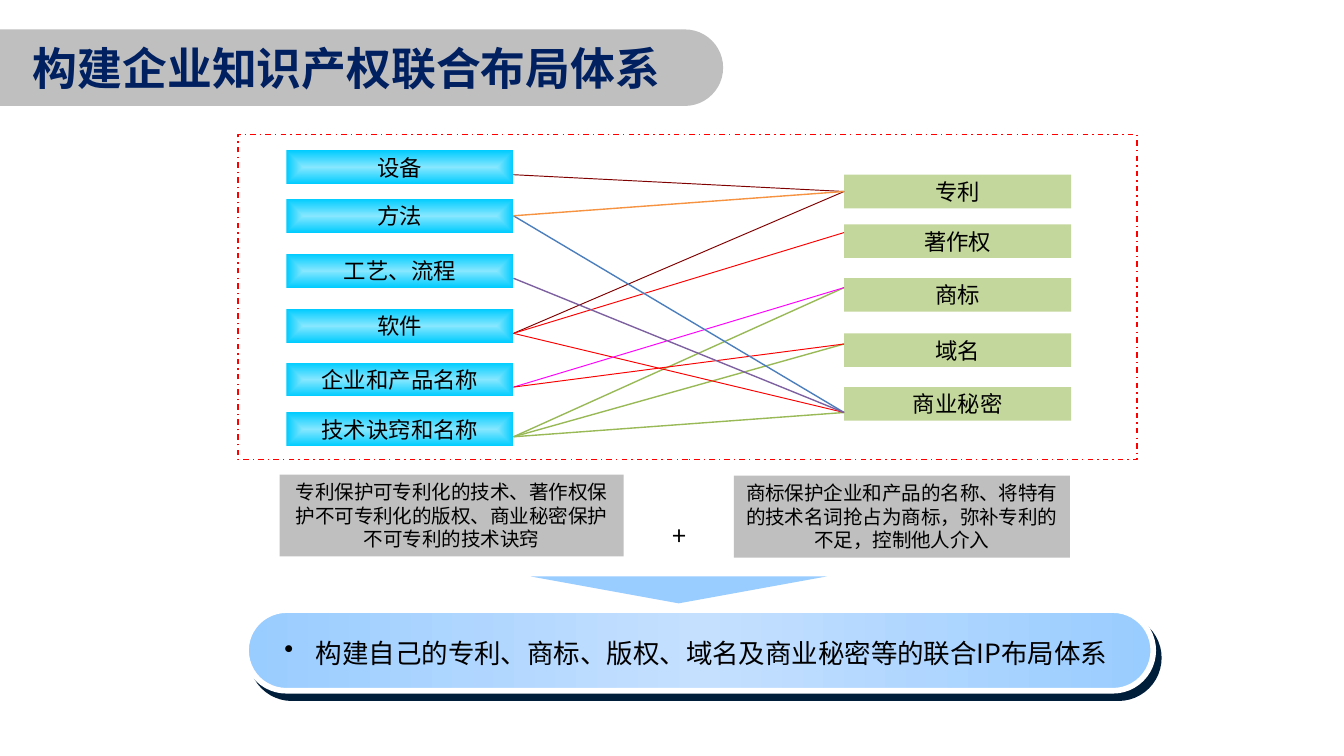
from pptx import Presentation
from pptx import oxml
from pptx.dml.color import RGBColor
from pptx.enum import dml, shapes, text
from pptx.oxml import ns
from pptx.util import Pt


class Theme:
    font = "Noto Sans CJK SC"
    black, navy, white = "000000", "002060", "FFFFFF"
    gray, green, sky, pale = "BFBFBF", "C3D69B", "99CCFF", "C5E0FF"
    cyan, ice, shade = "00CCFF", "86E7FF", "001D3A"
    red, maroon, pink = "FF0000", "800000", "FF00FF"
    lime, blue, plum, amber = "98B955", "4B7EBC", "7D60A0", "F69240"
    title, goal, plus, item, note = 24, 14.2, 13.5, 12, 10.5


KIND = shapes.MSO_SHAPE
MID, TOP = text.MSO_ANCHOR.MIDDLE, text.MSO_ANCHOR.TOP
LEFT, MIDDLE = text.PP_ALIGN.LEFT, text.PP_ALIGN.CENTER


def rgb(code):
    return RGBColor.from_string(code)


def block(slide, kind, box, fill=None, line=None, width=0.75):
    shape = slide.shapes.add_shape(kind, *map(Pt, box))
    shape.shadow.inherit = False
    if fill:
        shape.fill.solid()
        shape.fill.fore_color.rgb = rgb(fill)
    else:
        shape.fill.background()
    if line:
        shape.line.color.rgb = rgb(line)
        shape.line.width = Pt(width)
    else:
        shape.line.fill.background()
    return shape


def blend(shape, stops, mode):
    """Swap the fill for a gradient; mode is its a:lin or a:path element."""
    marks = "".join(f'<a:gs pos="{spot * 1000}"><a:srgbClr val="{code}"/></a:gs>'
                    for spot, code in stops)
    props = shape._element.spPr
    grad = oxml.parse_xml(f'<a:gradFill {ns.nsdecls("a")} rotWithShape="1">'
                          f'<a:gsLst>{marks}</a:gsLst>{mode}</a:gradFill>')
    props.replace(props.find(ns.qn("a:noFill")), grad)


def write(shape, words, size, color=Theme.black, bold=False, align=MIDDLE,
          anchor=TOP, inset=5, wrap=True, space=None, hang=None):
    frame = shape.text_frame
    frame.word_wrap = wrap
    frame.vertical_anchor = anchor
    frame.margin_left, frame.margin_right = Pt(inset), Pt(5)
    frame.margin_top = frame.margin_bottom = Pt(3)
    para = frame.paragraphs[0]
    para.alignment = align
    if space:
        para.line_spacing = space
    if hang:
        props = para._p.get_or_add_pPr()
        props.set("marL", str(Pt(hang)))
        props.set("indent", str(-Pt(hang)))
        props.append(oxml.parse_xml(f'<a:buChar {ns.nsdecls("a")} char="•"/>'))
    run = para.add_run()
    run.text = words
    font = run.font
    font.size, font.bold, font.name = Pt(size), bold, Theme.font
    font.color.rgb = rgb(color)
    run._r.get_or_add_rPr().append(oxml.parse_xml(
        f'<a:ea {ns.nsdecls("a")} typeface="{Theme.font}"/>'))


def label(slide, box, words, size, **form):
    write(slide.shapes.add_textbox(*map(Pt, box)), words, size, **form)


def title(slide, box):
    bar = block(slide, KIND.ROUNDED_RECTANGLE, box, Theme.gray)
    bar.adjustments[0] = 0.5
    write(bar, "构建企业知识产权联合布局体系", Theme.title, color=Theme.navy,
          bold=True, align=LEFT, anchor=MID, inset=34)


def link(slide, start, end, color, width):
    """Each end is (x, y, box, side); a box is joined when it is given."""
    wire = slide.shapes.add_connector(shapes.MSO_CONNECTOR.STRAIGHT,
                                      *map(Pt, start[:2] + end[:2]))
    if start[2]:
        wire.begin_connect(start[2], 3)
    if end[2]:
        wire.end_connect(end[2], 1)
    wire.line.color.rgb = rgb(color)
    wire.line.width = Pt(width)
    wire._element.spPr.append(oxml.parse_xml(f'<a:effectLst {ns.nsdecls("a")}/>'))


def mapping(slide, box):
    x, y, _, _ = box
    wide, high = 121.7, 18
    frame = block(slide, KIND.RECTANGLE, box, line=Theme.red)
    frame.line.dash_style = dml.MSO_LINE.DASH_DOT

    # Name, top of the box, height of the link end below that top
    assets = [("设备", 8.6, 13), ("方法", 34.6, 9), ("工艺、流程", 64.1, 13),
              ("软件", 93.6, 13), ("企业和产品名称", 122.4, 13),
              ("技术诀窍和名称", 149, 13)]
    rights = [("专利", 21.6, 9), ("著作权", 48.2, 4.4), ("商标", 77, 5.1),
              ("域名", 106.6, 5.7), ("商业秘密", 135.4, 13.6)]
    ends = {}
    for rows, left, edge in (assets, 25.9, wide), (rights, 324.7, 0):
        for name, top, drop in rows:
            spot = (x + left, y + top, wide, high)
            if rows is assets:
                shape = block(slide, KIND.RECTANGLE, spot)
                blend(shape, [(0, Theme.ice), (100, Theme.cyan)],
                      '<a:path path="shape"><a:fillToRect l="50000" t="50000" '
                      'r="50000" b="50000"/></a:path>')
            else:
                shape = block(slide, KIND.RECTANGLE, spot, Theme.green)
            write(shape, name, Theme.item, anchor=MID, wrap=False)
            joint = shape if drop == high / 2 else None
            ends[name] = (x + left + edge, y + top + drop, joint)

    # Links from assets to rights
    for start, end, color, width in (
            ("设备", "专利", Theme.maroon, 0.5),
            ("软件", "专利", Theme.maroon, 0.5),
            ("技术诀窍和名称", "商业秘密", Theme.lime, 0.75),
            ("技术诀窍和名称", "商标", Theme.lime, 0.75),
            ("技术诀窍和名称", "域名", Theme.lime, 0.75),
            ("软件", "著作权", Theme.red, 0.5),
            ("软件", "商业秘密", Theme.red, 0.5),
            ("企业和产品名称", "商标", Theme.pink, 0.5),
            ("企业和产品名称", "域名", Theme.red, 0.5),
            ("方法", "商业秘密", Theme.blue, 0.75),
            ("工艺、流程", "商业秘密", Theme.plum, 0.75),
            ("方法", "专利", Theme.amber, 0.75)):
        link(slide, ends[start], ends[end], color, width)


def notes(slide, box):
    x, y, wide, high = box
    for left, top, size, words in (
            (0, 0, 184.3,
             "专利保护可专利化的技术、著作权保护不可专利化的版权、商业秘密保护不可专利的技术诀窍"),
            (wide - 180, 0.6, 180,
             "商标保护企业和产品的名称、将特有的技术名词抢占为商标，弥补专利的不足，控制他人介入")):
        card = block(slide, KIND.RECTANGLE, (x + left, y + top, size, high),
                     Theme.gray)
        write(card, words, Theme.note)
    label(slide, (x + 189.3, y + 21.6, 49.7, 21.6), "+", Theme.plus)


def goal(slide, box):
    x, y, wide, high = box
    # Arrow down to the goal
    arrow = block(slide, KIND.ISOSCELES_TRIANGLE,
                  (x + 152.6, y - 18, 158.4, 14.4), Theme.sky)
    arrow._element.spPr.xfrm.set("flipV", "1")

    # Pill with a hard shadow
    pill = block(slide, KIND.ROUNDED_RECTANGLE, box, line=Theme.white, width=3)
    pill.adjustments[0] = 0.5
    blend(pill, [(0, Theme.sky), (50, Theme.pale), (100, Theme.sky)],
          '<a:lin ang="0" scaled="1"/>')
    pill._element.spPr.find(ns.qn("a:effectLst")).append(oxml.parse_xml(
        f'<a:outerShdw {ns.nsdecls("a")} blurRad="0" dist="{Pt(5)}" '
        f'dir="{53 * 60000}" algn="ctr" rotWithShape="0">'
        f'<a:srgbClr val="{Theme.shade}"/></a:outerShdw>'))
    label(slide, (x - 4.3, y + 7.9, wide + 4.3, 26.6),
          "构建自己的专利、商标、版权、域名及商业秘密等的联合IP布局体系",
          Theme.goal, space=1.2, hang=17)


def main():
    deck = Presentation()
    deck.slide_width, deck.slide_height = Pt(720), Pt(405)
    slide = deck.slides.add_slide(deck.slide_layouts[6])
    mapping(slide, (127.5, 72, 481.7, 174.2))
    notes(slide, (149.8, 254.2, 423.4, 43.9))
    goal(slide, (131.8, 326.9, 486, 43.2))
    title(slide, (-22.3, 15.8, 409.7, 41))
    deck.save("out.pptx")


if __name__ == "__main__":
    main()
